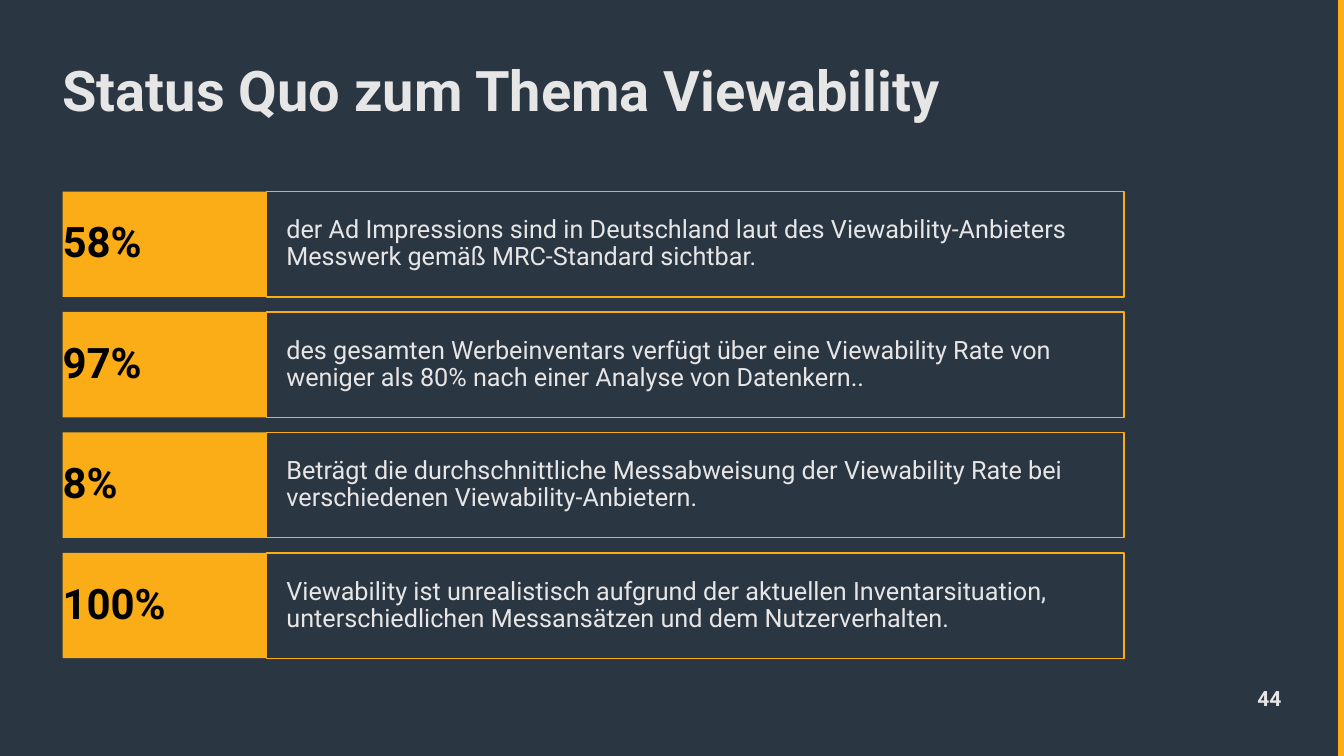
from dataclasses import dataclass

from lxml.etree import SubElement
from pptx import Presentation
from pptx.dml.color import RGBColor
from pptx.enum.shapes import MSO_CONNECTOR as Connector, MSO_SHAPE as Shape
from pptx.enum.text import MSO_ANCHOR as Anchor, MSO_AUTO_SIZE as AutoSize, PP_ALIGN as Align
from pptx.oxml.ns import qn
from pptx.util import Inches, Pt

HEADING = "Status Quo zum Thema Viewability"
PAGE_NUMBER = "44"
FINDINGS = [
    ("58%", "der Ad Impressions sind in Deutschland laut des Viewability-Anbieters "
            "Messwerk gemäß MRC-Standard sichtbar."),
    ("97%", "des gesamten Werbeinventars verfügt über eine Viewability Rate von "
            "weniger als 80% nach einer Analyse von Datenkern.."),
    ("8%", "Beträgt die durchschnittliche Messabweisung der Viewability Rate bei "
           "verschiedenen Viewability-Anbietern."),
    ("100%", "Viewability ist unrealistisch aufgrund der aktuellen Inventarsituation, "
             "unterschiedlichen Messansätzen und dem Nutzerverhalten."),
]


@dataclass(frozen=True)
class Theme:
    font: str = "Roboto"
    background: RGBColor = RGBColor(0x2B, 0x36, 0x43)
    accent: RGBColor = RGBColor(0xFB, 0xAD, 0x18)
    light: RGBColor = RGBColor(0xE7, 0xE6, 0xE6)
    dark: RGBColor = RGBColor(0, 0, 0)
    heading_size: int = 80
    figure_size: int = 60
    statement_size: int = 36
    page_size: int = 30


THEME = Theme()
SLIDE_WIDTH, SLIDE_HEIGHT = 26.66, 15
LEFT, ROWS_TOP = 1.24, 3.8
FIGURE_WIDTH, STATEMENT_WIDTH = 4.05, 17.01
ROW_HEIGHT, ROW_GAP = 2.09, 0.3
EDGE_X = 26.61


def write(holder, text, size, color, bold=False, anchor=Anchor.MIDDLE,
          align=Align.LEFT, inset=0, spacing=0.9):
    frame = holder.text_frame
    frame.text = text
    frame.word_wrap = True
    frame.auto_size = AutoSize.NONE
    frame.vertical_anchor = anchor
    frame.margin_left = frame.margin_right = Inches(inset)
    frame.margin_top = frame.margin_bottom = Inches(inset)
    paragraph = frame.paragraphs[0]
    paragraph.alignment = align
    paragraph.line_spacing = spacing
    paragraph.space_before = Pt(0)
    font = paragraph.font
    font.name, font.size, font.bold = THEME.font, Pt(size), bold
    font.color.rgb = color


def add_box(slide, left, top, width):
    box = slide.shapes.add_shape(
        Shape.RECTANGLE, Inches(left), Inches(top), Inches(width), Inches(ROW_HEIGHT))
    box.shadow.inherit = False
    return box


def add_finding(slide, top, figure, statement):
    figure_box = add_box(slide, LEFT, top, FIGURE_WIDTH)
    figure_box.fill.solid()
    figure_box.fill.fore_color.rgb = THEME.accent
    figure_box.line.fill.background()
    write(figure_box, figure, THEME.figure_size, THEME.dark, bold=True)

    statement_box = add_box(slide, LEFT + FIGURE_WIDTH, top, STATEMENT_WIDTH)
    statement_box.fill.background()
    statement_box.line.color.rgb = THEME.accent
    statement_box.line.width = Pt(2)
    write(statement_box, statement, THEME.statement_size, THEME.light, inset=0.39)


def add_edge(slide):
    edge = slide.shapes.add_connector(
        Connector.STRAIGHT, Inches(EDGE_X), 0, Inches(EDGE_X), Inches(SLIDE_HEIGHT))
    edge.line.color.rgb = THEME.accent
    edge.line.width = Pt(9)
    SubElement(edge.element.spPr, qn("a:effectLst"))


def main():
    deck = Presentation()
    deck.slide_width, deck.slide_height = Inches(SLIDE_WIDTH), Inches(SLIDE_HEIGHT)
    slide = deck.slides.add_slide(deck.slide_layouts.get_by_name("Title Only"))
    slide.background.fill.solid()
    slide.background.fill.fore_color.rgb = THEME.background
    add_edge(slide)

    title = slide.shapes.title
    title.left, title.top = Inches(LEFT), Inches(1.24)
    title.width, title.height = Inches(23), Inches(1.21)
    write(title, HEADING, THEME.heading_size, THEME.light, bold=True,
          anchor=Anchor.TOP, spacing=Pt(86))

    for row, (figure, statement) in enumerate(FINDINGS):
        add_finding(slide, ROWS_TOP + row * (ROW_HEIGHT + ROW_GAP), figure, statement)

    page = slide.shapes.add_textbox(Inches(23.14), Inches(13.6), Inches(2.28), Inches(0.51))
    write(page, PAGE_NUMBER, THEME.page_size, THEME.light, bold=True,
          anchor=Anchor.BOTTOM, align=Align.RIGHT, spacing=1.0)
    deck.save("out.pptx")


if __name__ == "__main__":
    main()
